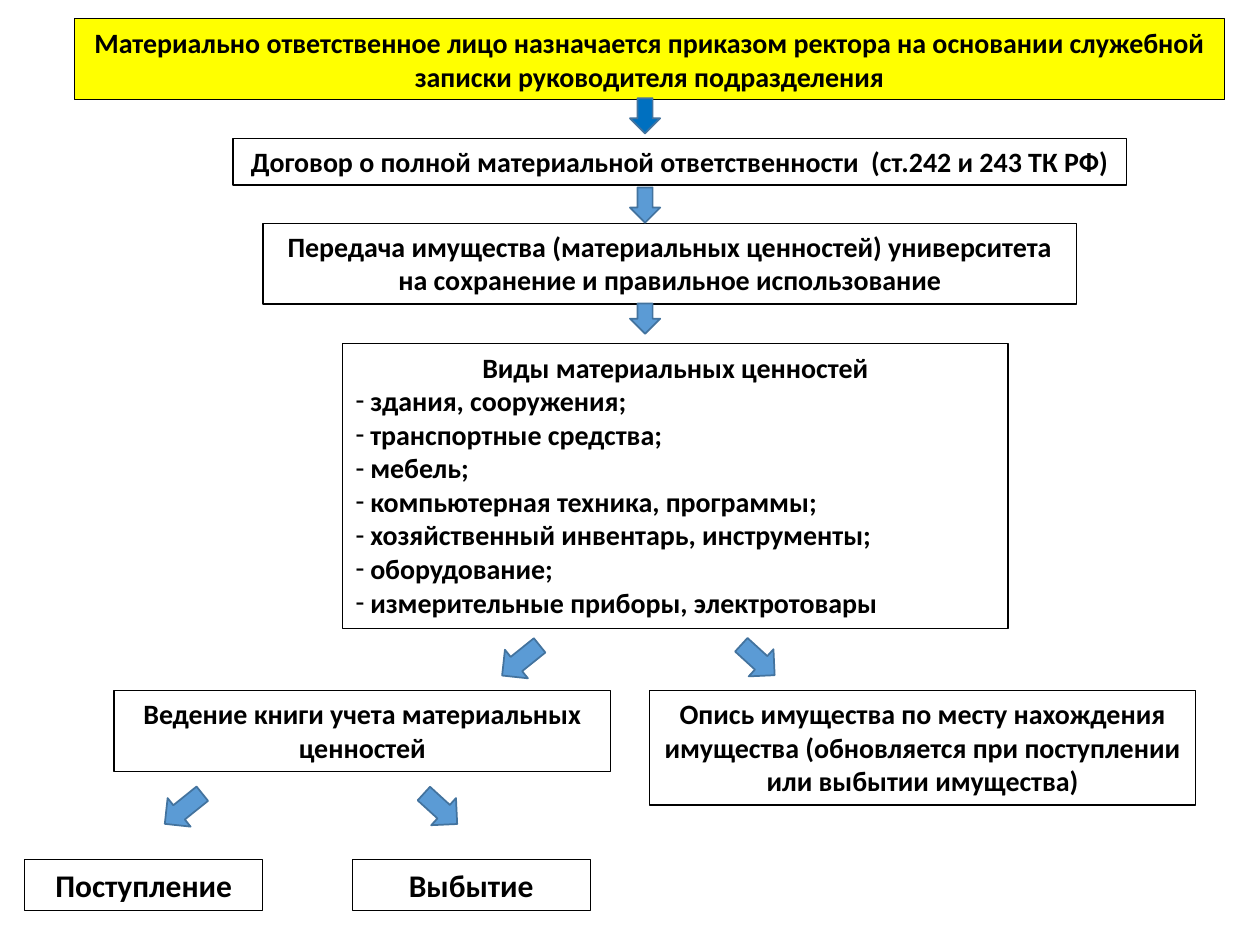
from dataclasses import dataclass

from lxml import etree
from pptx import Presentation
from pptx.dml.color import RGBColor
from pptx.enum.shapes import MSO_SHAPE
from pptx.enum.text import MSO_ANCHOR, MSO_AUTO_SIZE, PP_ALIGN
from pptx.oxml.ns import qn
from pptx.shapes.autoshape import Shape
from pptx.slide import Slide
from pptx.text.text import _Paragraph
from pptx.util import Cm, Pt

RECTANGLE = MSO_SHAPE.RECTANGLE
DOWN_ARROW = MSO_SHAPE.DOWN_ARROW
TOP, MIDDLE = MSO_ANCHOR.TOP, MSO_ANCHOR.MIDDLE
LEFT, CENTER = PP_ALIGN.LEFT, PP_ALIGN.CENTER
FIXED_SIZE = MSO_AUTO_SIZE.NONE

BLACK = RGBColor(0x00, 0x00, 0x00)
YELLOW = RGBColor(0xFF, 0xFF, 0x00)
DEEP_BLUE = RGBColor(0x00, 0x70, 0xC0)
BLUE = RGBColor(0x5B, 0x9B, 0xD5)
BLUE_EDGE = RGBColor(0x43, 0x73, 0x9E)

FONT = "Calibri"
DASH_INDENT = Cm(0.3)


@dataclass(frozen=True)
class Area:
    left: float
    top: float
    width: float
    height: float


@dataclass(frozen=True)
class Step:
    text: str
    area: Area
    size: int = 16


@dataclass(frozen=True)
class Arrow:
    area: Area
    rotation: float = 0
    color: RGBColor = BLUE


APPOINTMENT = Step(
    "Материально ответственное лицо назначается приказом ректора "
    "на основании служебной записки руководителя подразделения",
    Area(1.5, 0.38, 23.19, 1.63),
)
ASSET_KINDS_AREA = Area(6.91, 6.93, 13.41, 5.74)
ASSET_KINDS_HEADING = "Виды материальных ценностей"
ASSET_KINDS = [
    "здания, сооружения;",
    "транспортные средства;",
    "мебель;",
    "компьютерная техника, программы;",
    "хозяйственный инвентарь, инструменты;",
    "оборудование;",
    "измерительные приборы, электротовары",
]
STEPS = [
    Step("Договор о полной материальной ответственности  (ст.242 и 243 ТК РФ)",
         Area(4.7, 2.79, 18.01, 0.94)),
    Step("Передача имущества (материальных ценностей) университета "
         "на сохранение и правильное использование",
         Area(5.3, 4.5, 16.41, 1.63)),
    Step("Ведение книги учета материальных ценностей",
         Area(2.3, 13.92, 10.01, 1.63)),
    Step("Опись имущества по месту нахождения имущества "
         "(обновляется при поступлении или выбытии имущества)",
         Area(13.1, 13.92, 11, 2.31)),
    Step("Поступление", Area(0.5, 17.33, 4.8, 1.02), 18),
    Step("Выбытие", Area(7.1, 17.33, 4.8, 1.02), 18),
]
ARROWS = [
    Arrow(Area(12.7, 1.98, 0.61, 0.71), color=DEEP_BLUE),
    Arrow(Area(12.7, 3.78, 0.61, 0.71)),
    Arrow(Area(12.7, 6.12, 0.61, 0.61)),
    Arrow(Area(10.13, 12.83, 0.74, 0.97), 51.2),
    Arrow(Area(14.91, 12.85, 0.74, 0.91), 312.4),
    Arrow(Area(3.33, 15.82, 0.74, 0.97), 51.2),
    Arrow(Area(8.51, 15.85, 0.74, 0.91), 312.4),
]


def place(shape: Shape, area: Area) -> None:
    shape.left, shape.top = Cm(area.left), Cm(area.top)
    shape.width, shape.height = Cm(area.width), Cm(area.height)


def outline(shape: Shape, color: RGBColor, width: float) -> None:
    shape.line.color.rgb = color
    shape.line.width = Pt(width)
    shape.shadow.inherit = False


def format_paragraph(paragraph: _Paragraph, size: int, dashed: bool = False) -> None:
    paragraph.alignment = LEFT if dashed else CENTER
    paragraph.line_spacing = 1.0
    paragraph.space_before = paragraph.space_after = Pt(0)
    properties = paragraph._p.get_or_add_pPr()
    indent = DASH_INDENT if dashed else 0
    properties.set("marL", str(indent))
    properties.set("indent", str(-indent))
    if dashed:
        etree.SubElement(properties, qn("a:buFontTx"))
        etree.SubElement(properties, qn("a:buChar"), char="-")
    else:
        etree.SubElement(properties, qn("a:buNone"))
    font = paragraph.font
    font.name, font.size, font.bold = FONT, Pt(size), True
    font.color.rgb = BLACK


def frame_text(shape: Shape, area: Area, anchor: MSO_ANCHOR) -> None:
    place(shape, area)
    outline(shape, BLACK, 0.75)
    frame = shape.text_frame
    frame.word_wrap = True
    frame.auto_size = FIXED_SIZE
    frame.vertical_anchor = anchor


def fill_step(shape: Shape, step: Step, anchor: MSO_ANCHOR = TOP) -> None:
    frame_text(shape, step.area, anchor)
    shape.text_frame.text = step.text
    format_paragraph(shape.text_frame.paragraphs[0], step.size)


def add_step(slide: Slide, step: Step) -> None:
    shape = slide.shapes.add_shape(RECTANGLE, 0, 0, 0, 0)
    shape.fill.background()
    fill_step(shape, step)


def fill_asset_kinds(body: Shape) -> None:
    frame_text(body, ASSET_KINDS_AREA, TOP)
    frame = body.text_frame
    frame.text = "\n".join([ASSET_KINDS_HEADING, *ASSET_KINDS])
    for index, paragraph in enumerate(frame.paragraphs):
        format_paragraph(paragraph, 16, dashed=index > 0)


def add_arrow(slide: Slide, arrow: Arrow) -> None:
    shape = slide.shapes.add_shape(DOWN_ARROW, 0, 0, 0, 0)
    place(shape, arrow.area)
    shape.rotation = arrow.rotation
    shape.fill.solid()
    shape.fill.fore_color.rgb = arrow.color
    outline(shape, BLUE_EDGE, 1)


def main() -> None:
    presentation = Presentation()
    presentation.slide_width = Cm(25.4)
    presentation.slide_height = Cm(19.05)
    slide = presentation.slides.add_slide(presentation.slide_layouts[1])

    title = slide.shapes.title
    title.fill.solid()
    title.fill.fore_color.rgb = YELLOW
    fill_step(title, APPOINTMENT, MIDDLE)
    fill_asset_kinds(slide.placeholders[1])

    for step in STEPS:
        add_step(slide, step)
    for arrow in ARROWS:
        add_arrow(slide, arrow)

    presentation.save("out.pptx")


if __name__ == "__main__":
    main()
